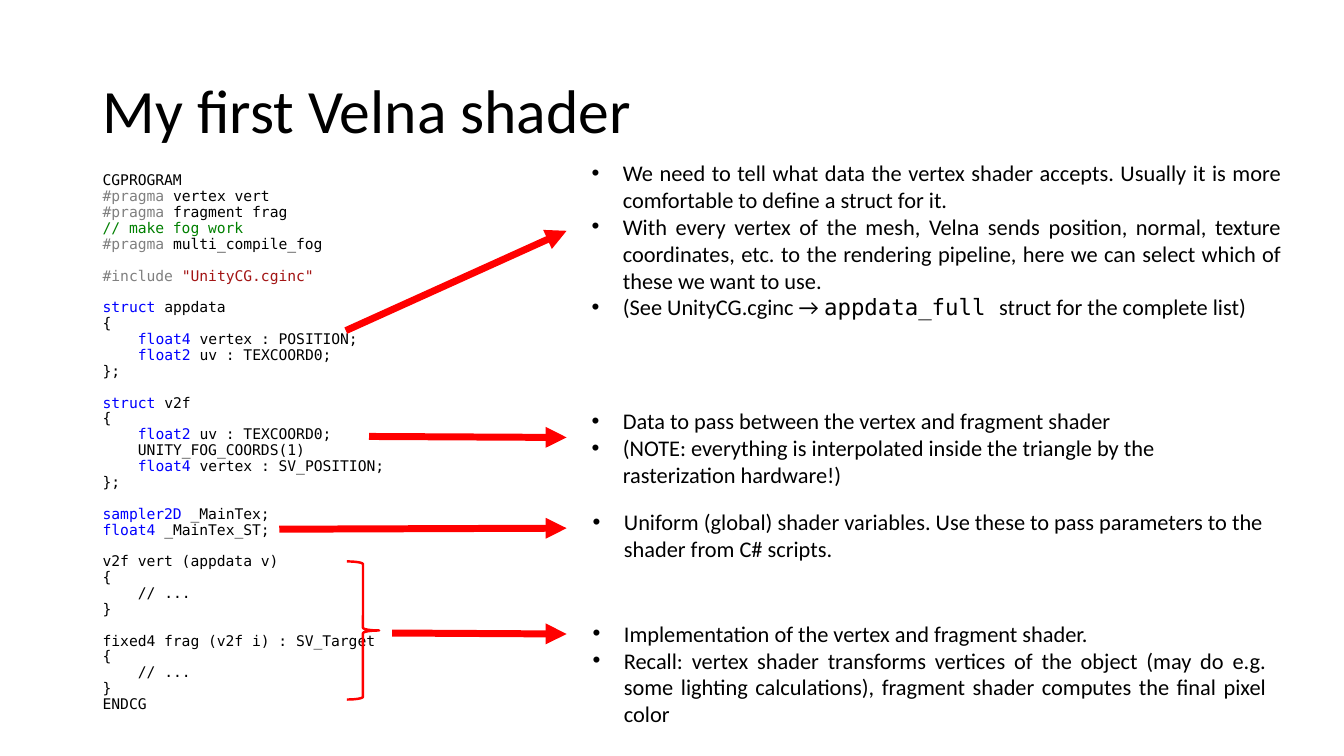
from lxml.etree import SubElement
from pptx import Presentation
from pptx.dml.color import RGBColor
from pptx.enum.shapes import MSO_CONNECTOR, MSO_SHAPE
from pptx.enum.text import MSO_ANCHOR, MSO_AUTO_SIZE, PP_ALIGN
from pptx.oxml.ns import qn
from pptx.util import Inches, Pt

BLACK = RGBColor(0x00, 0x00, 0x00)
GREY = RGBColor(0x80, 0x80, 0x80)
GREEN = RGBColor(0x00, 0x80, 0x00)
BLUE = RGBColor(0x00, 0x00, 0xFF)
BROWN = RGBColor(0xA3, 0x15, 0x15)
RED = RGBColor(0xFF, 0x00, 0x00)

TEXT_FONT = "Calibri"
CODE_FONT = "DejaVu Sans Mono"

HEAD_COLORS = {
    "#pragma": GREY,
    "#include": GREY,
    "struct": BLUE,
    "float2": BLUE,
    "float4": BLUE,
    "sampler2D": BLUE,
}

SHADER_CODE = """CGPROGRAM
#pragma vertex vert
#pragma fragment frag
// make fog work
#pragma multi_compile_fog

#include "UnityCG.cginc"

struct appdata
{
    float4 vertex : POSITION;
    float2 uv : TEXCOORD0;
};

struct v2f
{
    float2 uv : TEXCOORD0;
    UNITY_FOG_COORDS(1)
    float4 vertex : SV_POSITION;
};

sampler2D _MainTex;
float4 _MainTex_ST;

v2f vert (appdata v)
{
    // ...
}

fixed4 frag (v2f i) : SV_Target
{
    // ...
}
ENDCG"""

EXPLANATIONS = [
    ((5.77, 1.53, 7.04, 1.72), PP_ALIGN.JUSTIFY, [
        [("We need to tell what data the vertex shader accepts. Usually it is more "
          "comfortable to define a struct for it.", TEXT_FONT)],
        [("With every vertex of the mesh, Velna sends position, normal, texture "
          "coordinates, etc. to the rendering pipeline, here we can select which of "
          "these we want to use.", TEXT_FONT)],
        [("(See UnityCG.cginc → ", TEXT_FONT), ("appdata_full ", CODE_FONT),
         ("struct for the complete list)", TEXT_FONT)],
    ]),
    ((5.77, 3.99, 6.78, 0.91), PP_ALIGN.LEFT, [
        [("Data to pass between the vertex and fragment shader", TEXT_FONT)],
        [("(NOTE: everything is interpolated inside the triangle by the "
          "rasterization hardware!)", TEXT_FONT)],
    ]),
    ((5.78, 4.99, 6.88, 0.64), PP_ALIGN.LEFT, [
        [("Uniform (global) shader variables. Use these to pass parameters to the "
          "shader from C# scripts.", TEXT_FONT)],
    ]),
    ((5.78, 6.1, 6.88, 1.18), PP_ALIGN.JUSTIFY, [
        [("Implementation of the vertex and fragment shader.", TEXT_FONT)],
        [("Recall: vertex shader transforms vertices of the object (may do e.g. some "
          "lighting calculations), fragment shader computes the final pixel color",
          TEXT_FONT)],
    ]),
]

ARROW_TIP_LEFT = 5.62
ARROWS = [(3.43, 3.28, 2.29), (3.66, 4.33, 4.34), (2.77, 5.25, 5.24), (3.89, 6.28, 6.29)]


def color_code(line):
    if line.startswith("// make"):
        return [(line, GREEN)]
    head, space, tail = line.partition(" ")
    if head not in HEAD_COLORS:
        return [(line, BLACK)]
    tail_color = BROWN if tail.startswith('"') else BLACK
    return [(head + space, HEAD_COLORS[head]), (tail, tail_color)]


class ShaderSlide:
    def __init__(self, presentation):
        self.slide = presentation.slides.add_slide(presentation.slide_layouts[6])

    def text_frame(self, box):
        frame = self.slide.shapes.add_textbox(*map(Inches, box)).text_frame
        frame.word_wrap = True
        return frame

    def paragraph(self, frame, index, size, name):
        paragraph = frame.add_paragraph() if index else frame.paragraphs[0]
        paragraph.font.size = Pt(size)
        paragraph.font.name = name
        paragraph.font.color.rgb = BLACK
        return paragraph

    def title(self, text, box):
        frame = self.text_frame(box)
        frame.vertical_anchor = MSO_ANCHOR.MIDDLE
        paragraph = self.paragraph(frame, 0, 44, TEXT_FONT)
        paragraph.line_spacing = 0.9
        paragraph.add_run().text = text

    def code(self, source, box):
        frame = self.text_frame(box)
        index = 0
        for block_number, block in enumerate(source.split("\n\n")):
            for line_number, line in enumerate(block.split("\n")):
                paragraph = self.paragraph(frame, index, 10.5, CODE_FONT)
                paragraph.line_spacing = 0.9
                paragraph.space_before = Pt(11.3 if block_number and not line_number else 0)
                if line.startswith(" "):
                    self.indent(paragraph, 0.35, 0)
                for text, color in color_code(line.strip()):
                    run = paragraph.add_run()
                    run.text = text
                    run.font.color.rgb = color
                index += 1

    def indent(self, paragraph, left, first_line):
        properties = paragraph._p.get_or_add_pPr()
        properties.set("marL", str(Inches(left)))
        properties.set("indent", str(Inches(first_line)))
        return properties

    def explanation(self, box, alignment, items):
        frame = self.text_frame(box)
        frame.auto_size = MSO_AUTO_SIZE.SHAPE_TO_FIT_TEXT
        for index, runs in enumerate(items):
            paragraph = frame.add_paragraph() if index else frame.paragraphs[0]
            paragraph.alignment = alignment
            properties = self.indent(paragraph, 0.31, -0.31)
            SubElement(properties, qn("a:buFont")).set("typeface", "Arial")
            SubElement(properties, qn("a:buChar")).set("char", "•")
            paragraph.font.size = Pt(16)
            paragraph.font.name = TEXT_FONT
            paragraph.font.color.rgb = BLACK
            for text, name in runs:
                run = paragraph.add_run()
                run.text = text
                if name != TEXT_FONT:
                    run.font.name = name

    def arrow(self, left, top, tip_top):
        points = map(Inches, (left, top, ARROW_TIP_LEFT, tip_top))
        connector = self.slide.shapes.add_connector(MSO_CONNECTOR.STRAIGHT, *points)
        connector.line.color.rgb = RED
        connector.line.width = Pt(5)
        SubElement(connector.line._get_or_add_ln(), qn("a:tailEnd")).set("type", "triangle")
        SubElement(connector._element.spPr, qn("a:effectLst"))

    def brace(self, box):
        shape = self.slide.shapes.add_shape(MSO_SHAPE.RIGHT_BRACE, *map(Inches, box))
        shape.shadow.inherit = False
        shape.fill.background()
        shape.line.color.rgb = RED
        shape.line.width = Pt(1.75)


def main():
    presentation = Presentation()
    presentation.slide_width = Inches(13.33)
    presentation.slide_height = Inches(7.5)
    slide = ShaderSlide(presentation)
    slide.title("My first Velna shader", (0.92, 0.4, 11.5, 1.45))
    slide.code(SHADER_CODE, (0.92, 1.67, 11.5, 5.27))
    for explanation in EXPLANATIONS:
        slide.explanation(*explanation)
    for arrow in ARROWS:
        slide.arrow(*arrow)
    slide.brace((3.44, 5.57, 0.32, 1.37))
    presentation.save("out.pptx")


if __name__ == "__main__":
    main()
